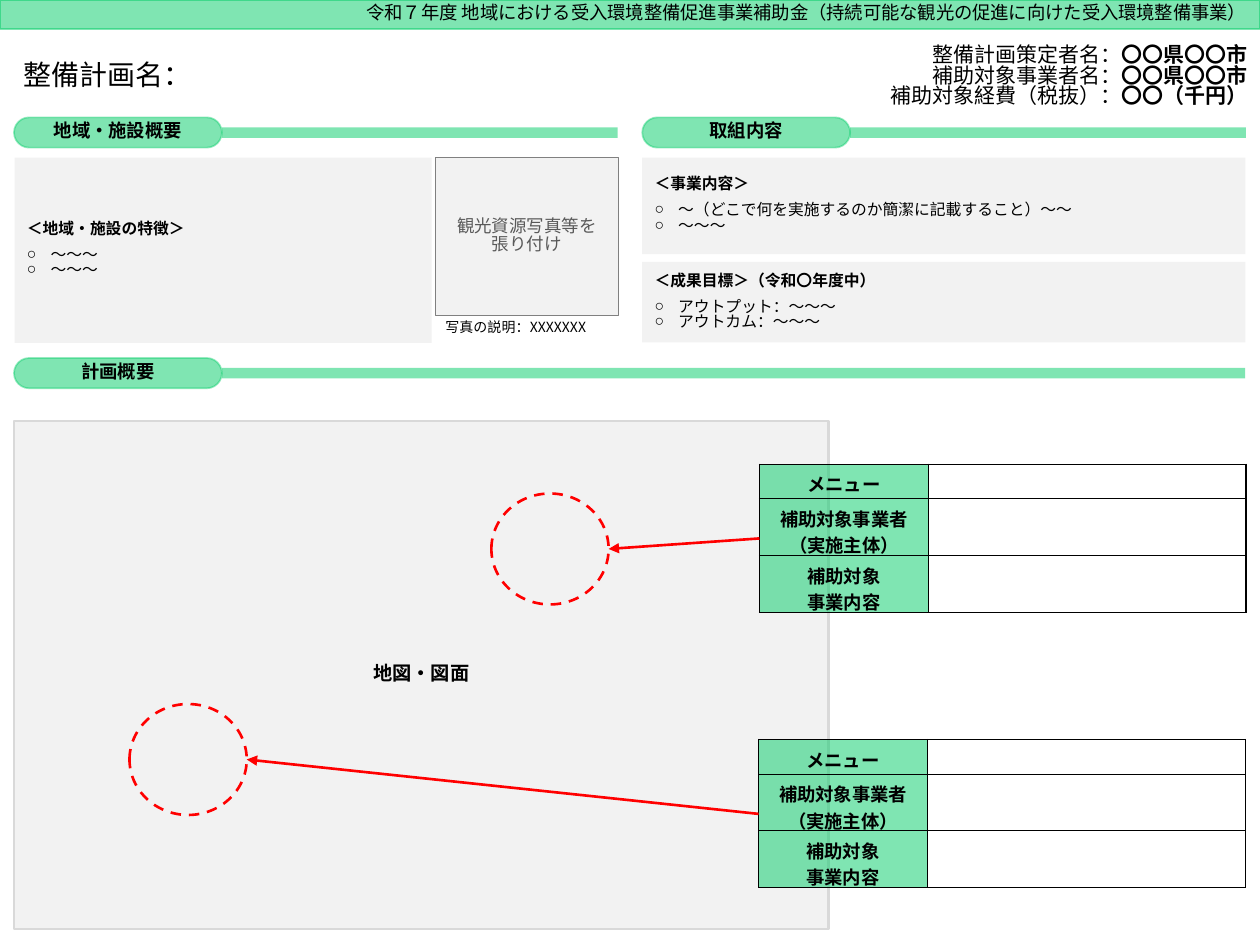
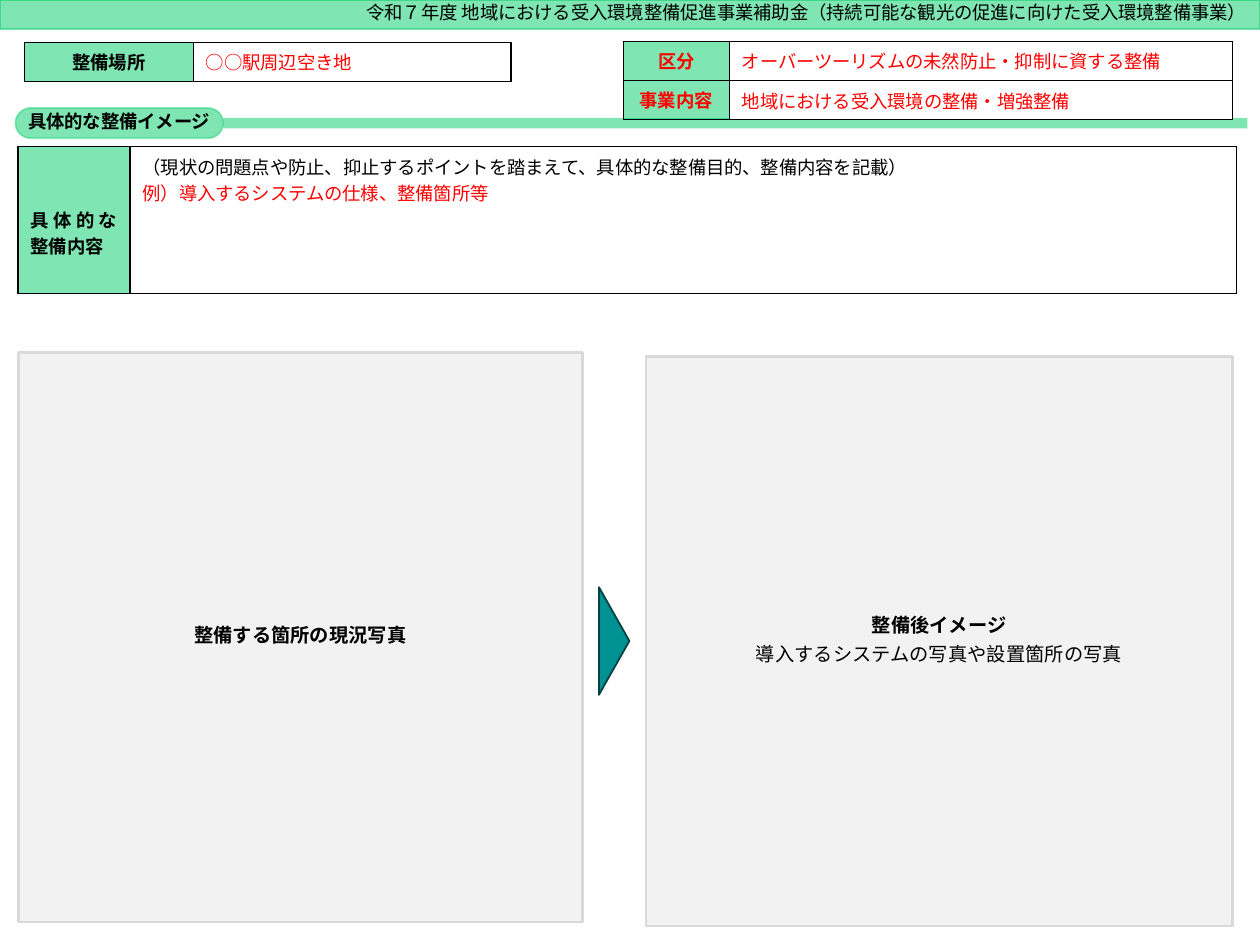
from lxml.etree import SubElement
from pptx import Presentation
from pptx.dml.color import RGBColor
from pptx.enum.dml import MSO_LINE_DASH_STYLE as Dash
from pptx.enum.shapes import MSO_CONNECTOR_TYPE as Connector, MSO_SHAPE as Shape
from pptx.enum.text import MSO_ANCHOR as Anchor, PP_ALIGN as Align
from pptx.oxml.ns import qn
from pptx.util import Pt

FONT = "Noto Sans CJK JP"
COLORS = {
    "green": "00CC66", "panel": "F2F2F2", "frame": "D9D9D9", "white": "FFFFFF",
    "black": "000000", "gray": "808080", "hint": "595959", "red": "FF0000",
    "teal": "009193", "dark_teal": "004040",
}
PROGRAM = "令和７年度 地域における受入環境整備促進事業補助金（持続可能な観光の促進に向けた受入環境整備事業）"
MENU_ROWS = [
    ("メニュー", ""),
    ("補助対象事業者\n（実施主体）", ""),
    ("補助対象\n事業内容", ""),
]
PILL_WIDTH, PILL_HEIGHT = 118.8, 17.3
ROW_HEIGHT = 11.5


# Formatting
def rgb(name):
    return RGBColor.from_string(COLORS[name])


def set_alpha(fill_element, percent):
    color = fill_element.find(".//" + qn("a:srgbClr"))
    SubElement(color, qn("a:alpha"), val=str(percent * 1000))


def set_fill(fill, parent, color, alpha=None):
    fill.solid()
    fill.fore_color.rgb = rgb(color)
    if alpha:
        set_alpha(parent.find(qn("a:solidFill")), alpha)


def set_line(line, color, width, alpha=None):
    line.color.rgb = rgb(color)
    line.width = Pt(width)
    if alpha:
        set_alpha(line._get_or_add_ln(), alpha)


def write(frame, paragraphs, size=10.5, color="black", bold=False, align=Align.LEFT,
          indent=0, bullets=False, after=0, spacing=0.82):
    """Each paragraph is a string or a list of (text, bold, color) runs."""
    for index, content in enumerate(paragraphs):
        paragraph = frame.paragraphs[0] if index == 0 else frame.add_paragraph()
        paragraph.alignment = align
        paragraph.line_spacing = spacing
        is_bullet = bullets and index > 0
        paragraph.space_after = Pt(0 if is_bullet else after)
        properties = paragraph._p.get_or_add_pPr()
        if indent:
            properties.set("indent", str(Pt(indent)))
        if is_bullet:
            properties.set("marL", str(Pt(13.5)))
            properties.set("indent", str(-Pt(13.5)))
            SubElement(properties, qn("a:buFont"), typeface="Arial")
            SubElement(properties, qn("a:buChar"), char="○")
        if not content:
            SubElement(paragraph._p, qn("a:endParaRPr"), sz=str(int(size * 100)))
            continue
        runs = content if isinstance(content, list) else [(content, bold and not is_bullet, color)]
        for text, run_bold, run_color in runs:
            for part, line in enumerate(text.split("\v")):
                if part:
                    paragraph.add_line_break()
                run = paragraph.add_run()
                run.text = line
                run.font.size = Pt(size)
                run.font.bold = run_bold
                run.font.name = FONT
                run.font.color.rgb = rgb(run_color)
                SubElement(run._r.get_or_add_rPr(), qn("a:ea"), typeface=FONT)


# Basic parts
def add_box(slide, box, fill=None, line=None, kind=Shape.RECTANGLE, alpha=None,
            paragraphs=(), insets=(7.2, 3.6), **text_format):
    shape = slide.shapes.add_shape(kind, *map(Pt, box))
    shape.shadow.inherit = False
    if fill:
        set_fill(shape.fill, shape._element.spPr, fill, alpha)
    else:
        shape.fill.background()
    if line:
        set_line(shape.line, *line)
    else:
        shape.line.fill.background()
    frame = shape.text_frame
    frame.word_wrap = True
    frame.vertical_anchor = Anchor.MIDDLE
    frame.margin_left = frame.margin_right = Pt(insets[0])
    frame.margin_top = frame.margin_bottom = Pt(insets[1])
    write(frame, paragraphs, **text_format)
    return shape


def add_line(slide, start, end, color, width, alpha=None, arrow=False):
    connector = slide.shapes.add_connector(Connector.STRAIGHT, *map(Pt, (*start, *end)))
    set_line(connector.line, color, width, alpha)
    if arrow:
        SubElement(connector.line._get_or_add_ln(), qn("a:tailEnd"), type="triangle")
    SubElement(connector._element.spPr, qn("a:effectLst"))


def add_borders(cell):
    properties = cell._tc.get_or_add_tcPr()
    for index, side in enumerate(("lnL", "lnR", "lnT", "lnB")):
        border = properties.makeelement(qn("a:" + side), {"w": str(Pt(0.75))})
        fill = SubElement(border, qn("a:solidFill"))
        SubElement(fill, qn("a:srgbClr"), val=COLORS["black"])
        properties.insert(index, border)


def label_table(slide, box, label_width, rows, row_height=ROW_HEIGHT, label_color="black",
                value_color="red", label_align=Align.CENTER, label_top=3.6,
                value_anchor=Anchor.MIDDLE):
    left, top, width, height = box
    graphic = slide.shapes.add_table(len(rows), 2, *map(Pt, box))
    table = graphic.table
    table.columns[0].width = Pt(label_width)
    table.columns[1].width = Pt(width - label_width)
    for row, (label, value) in enumerate(rows):
        table.rows[row].height = Pt(row_height)
        label_cell, value_cell = table.cell(row, 0), table.cell(row, 1)
        label_cell.margin_top = Pt(label_top)
        value_cell.vertical_anchor = value_anchor
        write(label_cell.text_frame, label.split("\n"), color=label_color, bold=True,
              align=label_align, spacing=1.0)
        value_lines = value if isinstance(value, list) else [value]
        write(value_cell.text_frame, value_lines, color=value_color, spacing=1.0)
        for cell, fill, alpha in ((label_cell, "green", 50), (value_cell, "white", None)):
            set_fill(cell.fill, cell._tc.get_or_add_tcPr(), fill, alpha)
            add_borders(cell)
    graphic.height = Pt(height)


# Shared regions
def header_band(slide):
    add_box(slide, (0, 0, 720, 16.6), "green", ("green", 1, 50), alpha=50,
            paragraphs=[PROGRAM], align=Align.RIGHT, indent=6.5)


def section_heading(slide, left, top, right, title):
    middle = top + PILL_HEIGHT / 2
    add_line(slide, (left + PILL_WIDTH, middle), (right, middle), "green", 6, alpha=50)
    pill = add_box(slide, (left, top, PILL_WIDTH, PILL_HEIGHT), "green", ("green", 1, 40),
                   Shape.ROUNDED_RECTANGLE, 50, [title], (2.9, 5.8),
                   bold=True, align=Align.CENTER)
    pill.adjustments[0] = 0.5


def note_panel(slide, box, paragraphs):
    add_box(slide, box, "panel", paragraphs=paragraphs, size=9, bold=True,
            bullets=True, after=6)


def image_panel(slide, box, paragraphs):
    add_box(slide, box, "panel", ("frame", 1.5), paragraphs=paragraphs, size=11,
            bold=True, align=Align.CENTER, after=6)


# Plan slide regions
def plan_title(slide, top, height):
    border = ("white", 1)
    add_box(slide, (0, top, 473, height), "white", border, paragraphs=["整備計画名："],
            size=16, indent=6.5)
    entries = [("整備計画策定者名：", "〇〇県〇〇市"), ("補助対象事業者名：", "〇〇県〇〇市"),
               ("補助対象経費（税抜）：", "〇〇（千円）")]
    add_box(slide, (473, top, 247, height), "white", border,
            paragraphs=[[(name, False, "black"), (value, True, "black")]
                        for name, value in entries],
            size=12, align=Align.RIGHT, indent=6.5)


def photo_slot(slide, left, top, width, height):
    add_box(slide, (left, top, width, height), "panel", ("gray", 0.25), insets=(2.9, 2.9),
            paragraphs=["観光資源写真等を\v張り付け"], size=10, color="hint", align=Align.CENTER)
    caption = slide.shapes.add_textbox(*map(Pt, (left, top + height + 0.5, width, 15)))
    frame = caption.text_frame
    frame.word_wrap = True
    frame.margin_left = frame.margin_right = Pt(5.8)
    frame.margin_top = frame.margin_bottom = Pt(2.9)
    write(frame, ["写真の説明：XXXXXXX"], size=8, align=Align.JUSTIFY)


def map_callout(slide, circle, table_left, table_top):
    left, top = circle
    width, height = 67, 63.4
    table_height = 85
    ring = add_box(slide, (left, top, width, height), line=("red", 1.5), kind=Shape.OVAL)
    ring.line.dash_style = Dash.DASH
    label_table(slide, (table_left, table_top, 278, table_height), 96.5, MENU_ROWS)
    add_line(slide, (table_left, table_top + table_height / 2),
             (left + width, top + height / 2), "red", 1.5, arrow=True)


def plan_slide(slide):
    header_band(slide)
    plan_title(slide, 20.2, 47.5)
    # Area overview
    section_heading(slide, 8, 67.1, 353, "地域・施設概要")
    note_panel(slide, (8.3, 90, 238.3, 106), ["＜地域・施設の特徴＞", "～～～", "～～～"])
    photo_slot(slide, 248.7, 90, 104.7, 90.2)
    # Activities and goals
    section_heading(slide, 367, 67.1, 712, "取組内容")
    note_panel(slide, (367, 90, 344.7, 55.2),
               ["＜事業内容＞", "～（どこで何を実施するのか簡潔に記載すること）～～", "～～～"])
    note_panel(slide, (367, 149.7, 344.7, 46),
               ["＜成果目標＞（令和〇年度中）", "アウトプット：～～～", "アウトカム：～～～"])
    # Plan map
    section_heading(slide, 8, 204.6, 711.5, "計画概要")
    image_panel(slide, (8, 240.7, 465.6, 290.2), ["地図・図面"])
    map_callout(slide, (74, 402.3), 433.5, 422.6)
    map_callout(slide, (280.8, 282), 434, 265.2)


def detail_slide(slide):
    header_band(slide)
    section_heading(slide, 8.8, 61.7, 712.8, "具体的な整備イメージ")
    # Current state and result
    image_panel(slide, (10.5, 201.4, 322.4, 325.5), ["整備する箇所の現況写真"])
    image_panel(slide, (369.2, 203.7, 335, 325.5),
                ["整備後イメージ", [("導入するシステムの写真や設置箇所の写真", False, "black")]])
    arrow = add_box(slide, (320.2, 357.6, 61.5, 17.4), "teal", ("dark_teal", 1),
                    Shape.ISOSCELES_TRIANGLE)
    arrow.rotation = 90
    # Description tables
    purpose = [[("（現状の問題点や防止、抑止するポイントを踏まえて、具体的な整備目的、整備内容を記載）",
                 False, "black")], "例）導入するシステムの仕様、整備箇所等"]
    label_table(slide, (10.3, 83.8, 696.3, 84), 64, [("具体的な整備内容", purpose)],
                row_height=84, label_align=Align.JUSTIFY, label_top=34,
                value_anchor=Anchor.TOP)
    label_table(slide, (356.2, 23.6, 348, 39.6), 60.5,
                [("区分", "オーバーツーリズムの未然防止・抑制に資する整備"),
                 ("事業内容", "地域における受入環境の整備・増強整備")], label_color="red")
    label_table(slide, (14, 24.2, 278, 20.2), 96.5, [("整備場所", "○○駅周辺空き地")])


def main():
    presentation = Presentation()
    presentation.slide_width, presentation.slide_height = Pt(720), Pt(540)
    blank = presentation.slide_layouts[6]
    for build in (plan_slide, detail_slide):
        build(presentation.slides.add_slide(blank))
    presentation.save("out.pptx")


if __name__ == "__main__":
    main()
